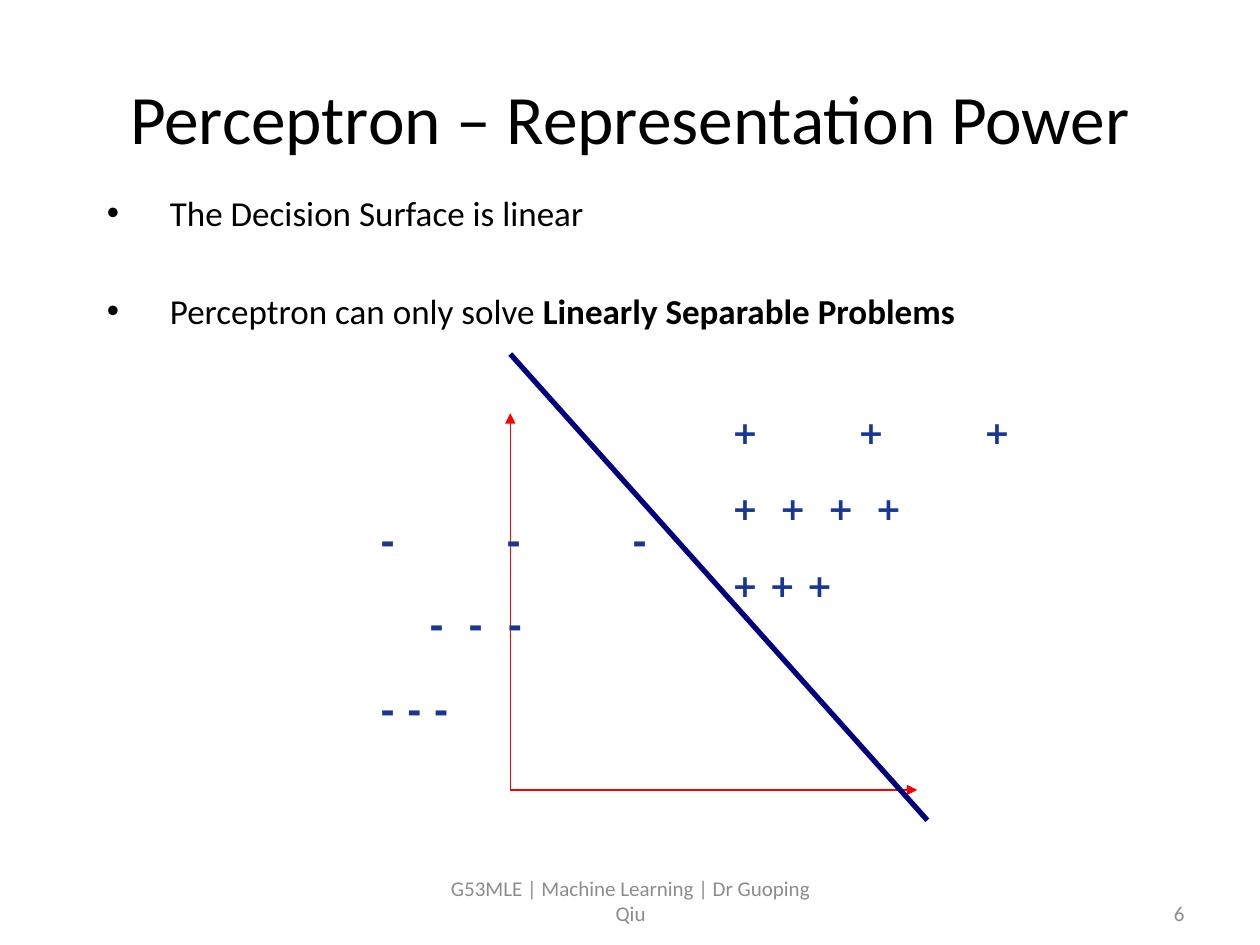
from pptx import Presentation
from pptx.dml.color import RGBColor
from pptx.enum.shapes import MSO_CONNECTOR
from pptx.enum.text import MSO_ANCHOR, PP_ALIGN
from pptx.oxml.ns import qn
from pptx.util import Inches, Pt
from lxml import etree

STRAIGHT = MSO_CONNECTOR.STRAIGHT
TOP, MIDDLE, BOTTOM = MSO_ANCHOR.TOP, MSO_ANCHOR.MIDDLE, MSO_ANCHOR.BOTTOM
LEFT, CENTER, RIGHT = PP_ALIGN.LEFT, PP_ALIGN.CENTER, PP_ALIGN.RIGHT
BLACK, GREY, BLUE, NAVY, RED = "000000", "8C8C8C", "193693", "000080", "FF0000"
BODY_FONT, SYMBOL_FONT = "Calibri", "DejaVu Sans"


def color(hex_string):
    return RGBColor.from_string(hex_string)


def add_box(slide, left, top, width, height, anchor=TOP):
    box = slide.shapes.add_textbox(Inches(left), Inches(top), Inches(width), Inches(height))
    frame = box.text_frame
    frame.word_wrap = True
    frame.vertical_anchor = anchor
    return frame


def next_paragraph(frame, index, gap):
    para = frame.add_paragraph() if index else frame.paragraphs[0]
    para.space_before = Pt(gap if index else 0)
    return para


def set_indent(para, margin, first_line):
    properties = para._p.get_or_add_pPr()
    properties.set("marL", str(Inches(margin)))
    properties.set("indent", str(Inches(first_line)))
    return properties


def add_run(para, text, size, hex_string, font=BODY_FONT, bold=False):
    span = para.add_run()
    span.text = text
    span.font.name = font
    span.font.size = Pt(size)
    span.font.bold = bold
    span.font.color.rgb = color(hex_string)


def add_label(slide, place, text, size, hex_string, align, anchor=MIDDLE):
    frame = add_box(slide, *place, anchor=anchor)
    para = frame.paragraphs[0]
    para.alignment = align
    add_run(para, text, size, hex_string)
    return frame


def add_bullets(slide, place, items, size, gap):
    """Each item is a list of (text, bold) spans; gap is the space between items."""
    frame = add_box(slide, *place)
    for index, spans in enumerate(items):
        para = next_paragraph(frame, index, gap)
        properties = set_indent(para, 0.5, -0.5)
        etree.SubElement(properties, qn("a:buFont"), typeface="Arial")
        etree.SubElement(properties, qn("a:buChar"), char="•")
        for text, bold in spans:
            add_run(para, text, size, BLACK, bold=bold)


def add_symbol_rows(slide, place, symbol, rows, size, gap):
    """Each row is (count, start, pitch) in inches; no pitch means single spaces."""
    frame = add_box(slide, *place)
    frame.margin_right = 0
    for index, (count, start, pitch) in enumerate(rows):
        para = next_paragraph(frame, index, gap)
        para.alignment = LEFT
        properties = set_indent(para, start, 0)
        if pitch:
            properties.set("defTabSz", str(Inches(pitch)))
        separator = "\t" if pitch else " "
        add_run(para, separator.join(symbol * count), size, BLUE, SYMBOL_FONT, True)


def add_line(slide, start, end, hex_string, width, arrow=False):
    points = [Inches(value) for value in (*start, *end)]
    connector = slide.shapes.add_connector(STRAIGHT, *points)
    connector.line.color.rgb = color(hex_string)
    connector.line.width = Pt(width)
    if arrow:
        etree.SubElement(connector.line._get_or_add_ln(), qn("a:tailEnd"), type="triangle")
    etree.SubElement(connector._element.spPr, qn("a:effectLst"))
    connector._element.remove(connector._element.find(qn("p:style")))


def main():
    deck = Presentation()
    deck.slide_width, deck.slide_height = Inches(10), Inches(7.5)
    slide = deck.slides.add_slide(deck.slide_layouts[6])

    add_label(slide, (0.5, 0.3, 9, 1.25), "Perceptron – Representation Power",
              39.6, BLACK, CENTER)
    add_bullets(slide, (0.75, 1.47, 8.5, 5.09), [
        [("The Decision Surface is linear", False)],
        [("Perceptron can only solve ", False), ("Linearly Separable Problems", True)],
    ], size=20, gap=32)
    add_label(slide, (3.42, 6.95, 3.17, 0.4), "G53MLE | Machine Learning | Dr Guoping Qiu",
              12, GREY, CENTER)
    page_number = add_label(slide, (7.17, 6.95, 2.33, 0.4), "6", 12, GREY, RIGHT, BOTTOM)
    page_number.margin_bottom = 0

    origin = (4.05, 6.27)
    for axis_end in ((4.05, 3.28), (7.28, 6.27)):
        add_line(slide, origin, axis_end, RED, 0.75, arrow=True)
    add_line(slide, (4.05, 2.81), (7.36, 6.51), NAVY, 3)

    add_symbol_rows(slide, (5.71, 3.23, 2.42, 1.6), "+",
                    [(3, 0, 1), (4, 0, 0.38), (3, 0, None)], size=18, gap=22)
    add_symbol_rows(slide, (2.92, 4.07, 2.34, 1.77), "-",
                    [(3, 0, 1), (3, 0.39, 0.31), (3, 0, None)], size=20, gap=24.5)

    deck.save("out.pptx")


if __name__ == "__main__":
    main()
